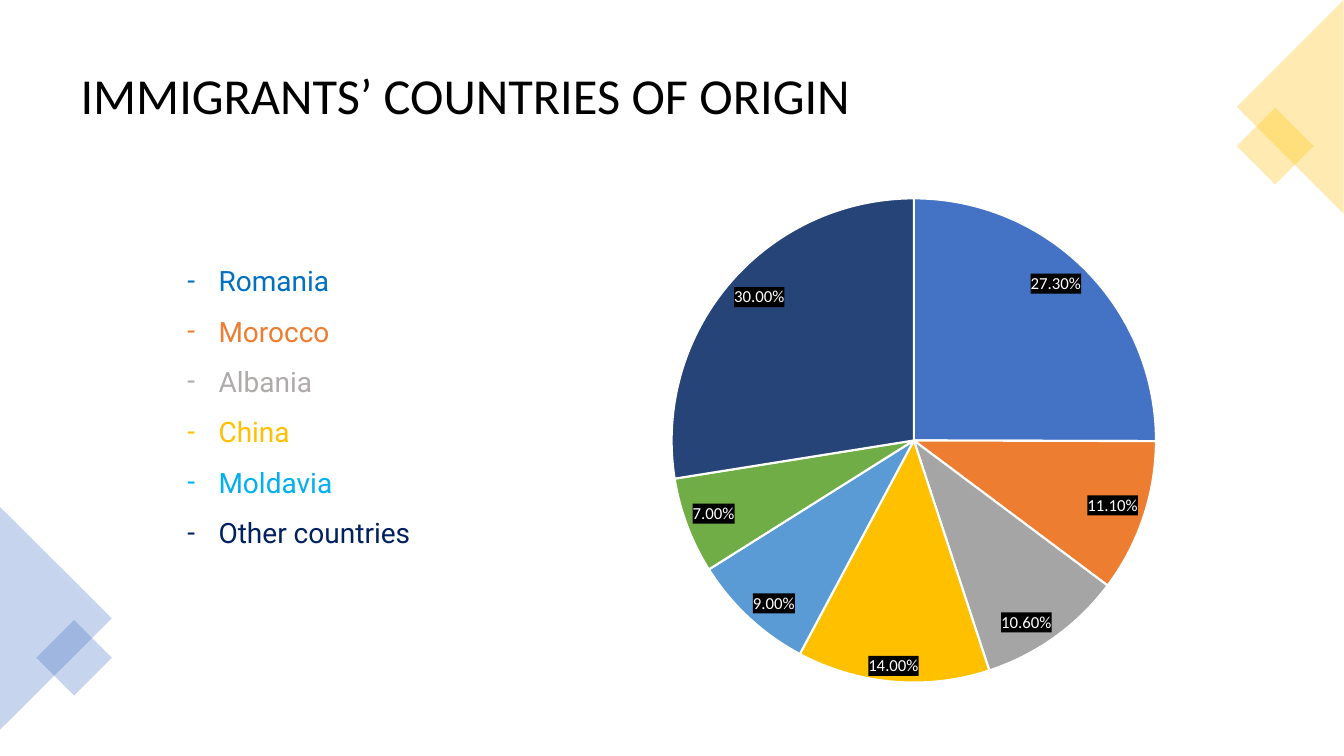
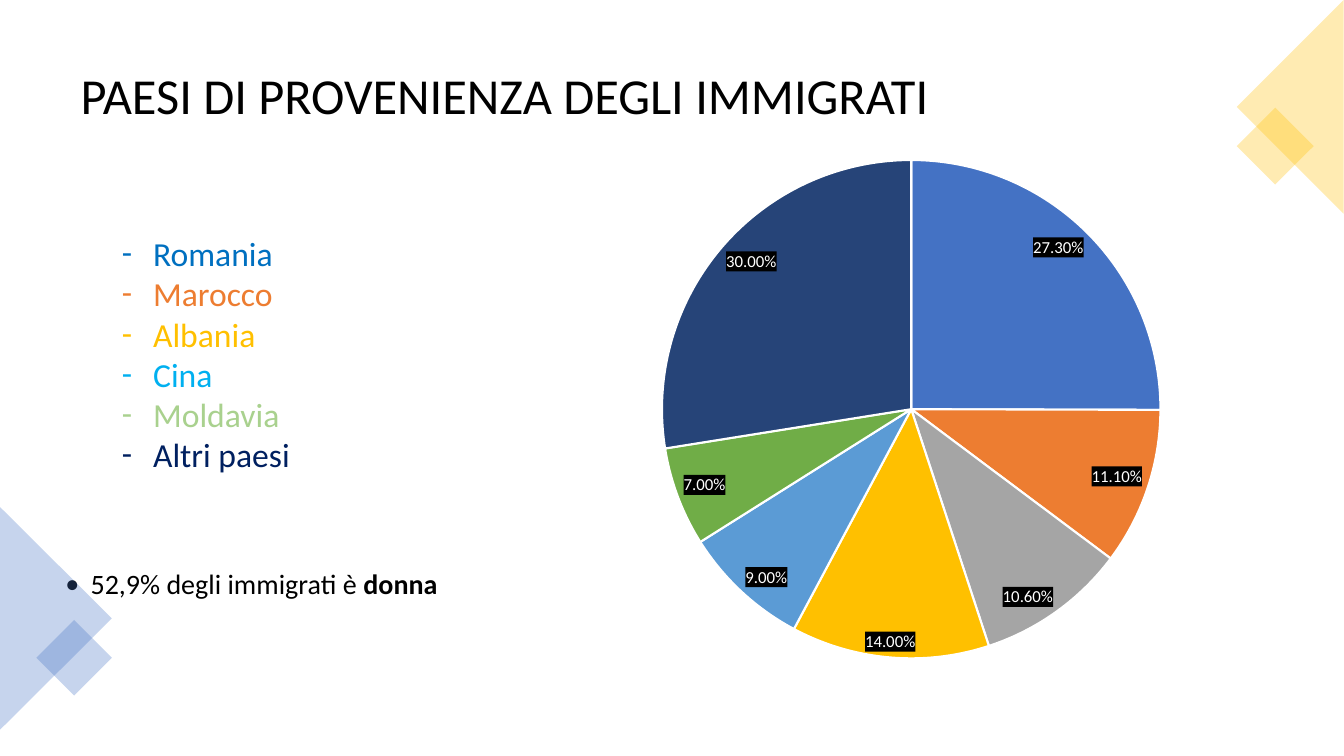
from dataclasses import dataclass
from typing import Any

from lxml.etree import SubElement
from pptx import Presentation
from pptx.chart.data import CategoryChartData
from pptx.dml.color import RGBColor
from pptx.enum.chart import XL_CHART_TYPE, XL_LABEL_POSITION
from pptx.enum.shapes import MSO_SHAPE
from pptx.enum.text import MSO_ANCHOR
from pptx.oxml import parse_xml
from pptx.oxml.ns import nsdecls, qn
from pptx.util import Inches, Pt

C = {
    "black": "000000", "white": "FFFFFF", "blue": "4472C4", "orange": "ED7D31",
    "grey": "A5A5A5", "gold": "FFC000", "sky": "5B9BD5", "green": "70AD47",
    "navy": "264478", "text_blue": "0070C0", "text_grey": "AFABAB",
    "text_cyan": "00B0F0", "text_green": "A9D18E", "text_navy": "002060",
}
SLICES = [("blue", 0.273), ("orange", 0.111), ("grey", 0.106), ("gold", 0.14),
          ("sky", 0.09), ("green", 0.07), ("navy", 0.3)]
W, H = Inches(13.33), Inches(7.5)
SQUARE, TRIANGLE = MSO_SHAPE.RECTANGLE, MSO_SHAPE.ISOSCELES_TRIANGLE


@dataclass(frozen=True)
class Box:
    """Left, top, width and height in percent of the slide."""
    x: float
    y: float
    w: float
    h: float

    def emu(self) -> tuple[int, int, int, int]:
        return (round(W * self.x / 100), round(H * self.y / 100),
                round(W * self.w / 100), round(H * self.h / 100))


@dataclass(frozen=True)
class Corner:
    box: Box
    kind: Any
    turn: int
    color: str


@dataclass(frozen=True)
class Line:
    text: str
    color: str = "black"
    strong: str = ""


@dataclass(frozen=True)
class Block:
    box: Box
    lines: list[Line]
    size: int
    face: str = "Calibri"
    bullet: str = ""
    indent: float = 0.31
    spacing: float = 1.0
    before: int = 0
    anchor: Any = MSO_ANCHOR.TOP


@dataclass(frozen=True)
class Page:
    title: str
    blocks: list[Block]
    chart: Box


CORNERS = [
    Corner(Box(92.85, 15.73, 4.05, 7.2), SQUARE, 45, "gold"),
    Corner(Box(88.05, 7.07, 15.9, 14.13), TRIANGLE, 270, "gold"),
    Corner(Box(-4.13, 74.4, 16.58, 14.8), TRIANGLE, 90, "blue"),
    Corner(Box(3.53, 83.47, 3.98, 7.07), SQUARE, 45, "blue"),
]
PAGES = [
    Page("IMMIGRANTS’ COUNTRIES OF ORIGIN", [
        Block(Box(13.2, 32, 56.1, 64.13), [
            Line("Romania", "text_blue"), Line("Morocco", "orange"),
            Line("Albania", "text_grey"), Line("China", "gold"),
            Line("Moldavia", "text_cyan"), Line("Other countries", "text_navy"),
        ], 20, "Roboto", "-", spacing=1.5),
    ], Box(38.63, 24.4, 58.73, 67.73)),
    Page("PAESI DI PROVENIENZA DEGLI IMMIGRATI", [
        Block(Box(8.33, 30.13, 40.43, 33.6), [
            Line("Romania", "text_blue"), Line("Marocco", "orange"),
            Line("Albania", "gold"), Line("Cina", "text_cyan"),
            Line("Moldavia", "text_green"), Line("Altri paesi", "text_navy"),
        ], 24, bullet="-"),
        Block(Box(4.13, 74.8, 38.55, 10.67),
              [Line("52,9% degli immigrati è ", strong="donna")],
              20, bullet="•", indent=0.25, spacing=0.9, before=10),
    ], Box(38.25, 19.33, 59.1, 69.6)),
]


def rgb(name: str) -> RGBColor:
    return RGBColor.from_string(C[name])


def apply(obj: Any, fmt: dict[str, Any]) -> None:
    for key, value in fmt.items():
        setattr(obj, key, value)


def style_font(font: Any, color: str, **fmt: Any) -> None:
    apply(font, fmt)
    font.color.rgb = rgb(color)


def add_bullet(p: Any, block: Block) -> None:
    pPr = p._p.get_or_add_pPr()
    pPr.set("marL", str(Inches(block.indent)))
    pPr.set("indent", str(-Inches(block.indent)))
    SubElement(pPr, qn("a:buFont")).set("typeface", block.face)
    SubElement(pPr, qn("a:buChar")).set("char", block.bullet)


def add_block(s: Any, block: Block) -> None:
    tf = s.shapes.add_textbox(*block.box.emu()).text_frame
    apply(tf, {"word_wrap": True, "vertical_anchor": block.anchor})
    for i, line in enumerate(block.lines):
        p = tf.add_paragraph() if i else tf.paragraphs[0]
        apply(p, {"line_spacing": block.spacing, "space_before": Pt(block.before)})
        if block.bullet:
            add_bullet(p, block)
        for text, bold in ((line.text, False), (line.strong, True)):
            if text:
                r = p.add_run()
                r.text = text
                style_font(r.font, line.color, name=block.face,
                           size=Pt(block.size), bold=bold)


def add_corner(s: Any, corner: Corner) -> None:
    sp = s.shapes.add_shape(corner.kind, *corner.box.emu())
    sp.rotation = corner.turn
    sp.shadow.inherit = False
    sp.line.fill.background()
    sp.fill.solid()
    sp.fill.fore_color.rgb = rgb(corner.color)
    clr = sp._element.spPr.find(".//" + qn("a:srgbClr"))
    SubElement(clr, qn("a:alpha")).set("val", "30000")


def add_pie(s: Any, box: Box) -> None:
    data = CategoryChartData(number_format="0.00%")
    data.categories = [str(i) for i in range(1, len(SLICES) + 1)]
    data.add_series("Series 1", [value for _, value in SLICES])
    chart = s.shapes.add_chart(XL_CHART_TYPE.PIE, *box.emu(), data).chart
    apply(chart, {"has_title": False, "has_legend": False})
    style_font(chart.font, "black", name="Calibri", size=Pt(10))
    plot = chart.plots[0]
    apply(plot, {"vary_by_categories": True, "has_data_labels": True})
    for i, (color, _) in enumerate(SLICES):
        fmt = plot.series[0].points[i].format
        fmt.fill.solid()
        fmt.fill.fore_color.rgb = rgb(color)
        fmt.line.color.rgb = rgb("white")
        fmt.line.width = Pt(1.5)
    labels = plot.data_labels
    apply(labels, {"show_value": True, "show_percentage": False,
                   "number_format": "0.00%", "number_format_is_linked": False,
                   "position": XL_LABEL_POSITION.INSIDE_END})
    style_font(labels.font, "white", name="Calibri", size=Pt(12))
    labels._element.find(qn("c:numFmt")).addnext(parse_xml(
        f'<c:spPr {nsdecls("c", "a")}><a:solidFill><a:srgbClr val="{C["black"]}"/>'
        "</a:solidFill></c:spPr>"))


def add_page(prs: Any, page: Page) -> None:
    s = prs.slides.add_slide(prs.slide_layouts[6])
    title = Block(Box(5.25, 4.67, 89.5, 16.53), [Line(page.title)], 36,
                  spacing=0.9, anchor=MSO_ANCHOR.MIDDLE)
    for block in (title, *page.blocks):
        add_block(s, block)
    for corner in CORNERS:
        add_corner(s, corner)
    add_pie(s, page.chart)


def main() -> None:
    prs = Presentation()
    apply(prs, {"slide_width": W, "slide_height": H})
    for page in PAGES:
        add_page(prs, page)
    prs.save("out.pptx")


if __name__ == "__main__":
    main()
